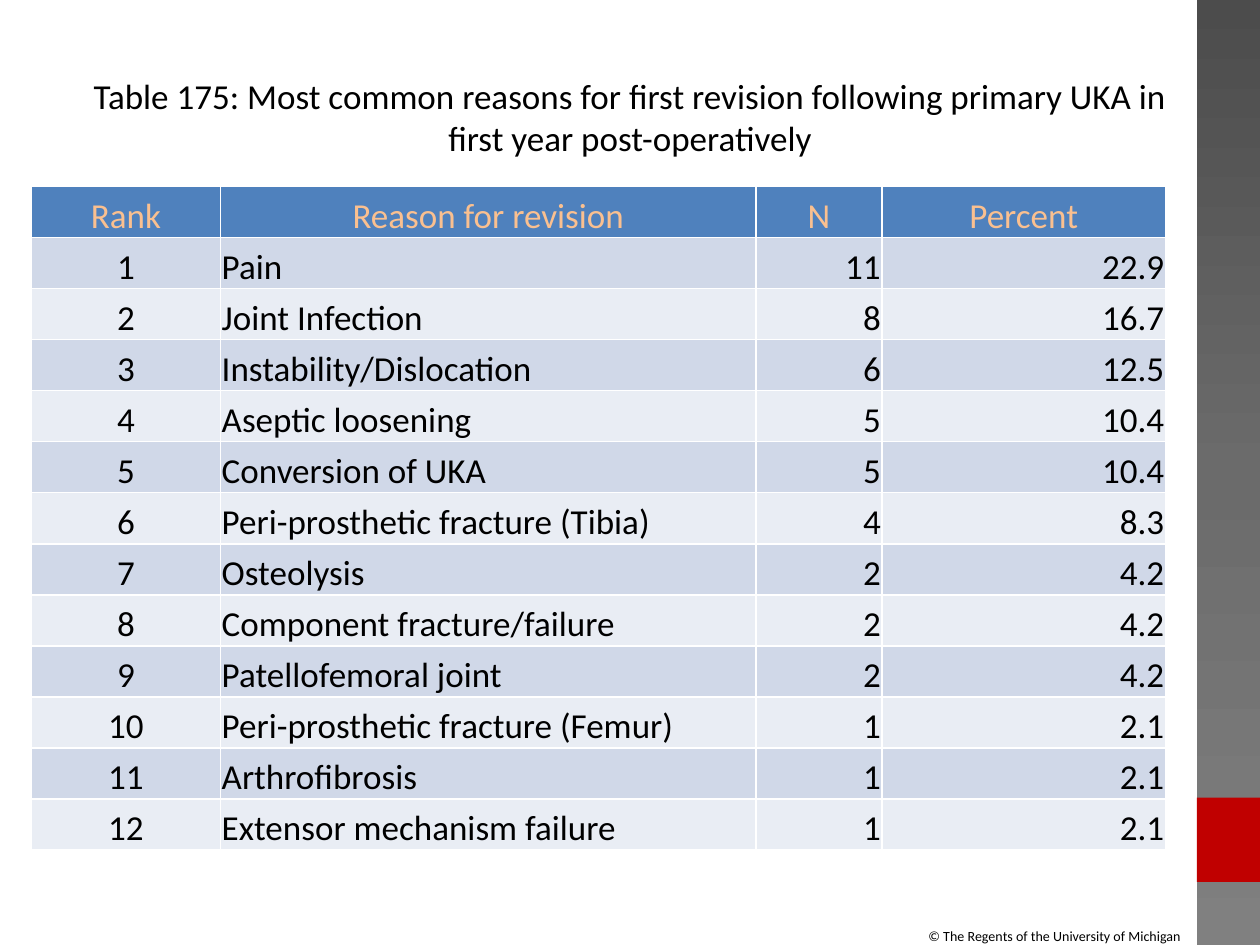
import copy
from typing import NamedTuple

import pptx
import pptx.dml.color
import pptx.enum.shapes
import pptx.enum.text
import pptx.oxml.ns
import pptx.util

Inches = pptx.util.Inches
Align = pptx.enum.text.PP_ALIGN
Anchor = pptx.enum.text.MSO_ANCHOR

FONT = "Calibri"
COLORS = {
    "text": "000000",
    "header_text": "FAC090",
    "header": "4F81BD",
    "odd_row": "D0D8E8",
    "even_row": "E9EDF4",
    "red": "C00000",
}
BAR_STOPS = [(0, "4C4C4C"), (0.5, "6B6B6B"), (1, "808080")]


class Column(NamedTuple):
    heading: str
    width: float
    alignment: Align


class Reason(NamedTuple):
    name: str
    count: int
    percent: float


COLUMNS = [
    Column("Rank", 1.5, Align.CENTER),
    Column("Reason for revision", 4.25, Align.LEFT),
    Column("N", 1, Align.RIGHT),
    Column("Percent", 2.25, Align.RIGHT),
]
REASONS = [
    Reason("Pain", 11, 22.9),
    Reason("Joint Infection", 8, 16.7),
    Reason("Instability/Dislocation", 6, 12.5),
    Reason("Aseptic loosening", 5, 10.4),
    Reason("Conversion of UKA", 5, 10.4),
    Reason("Peri-prosthetic fracture (Tibia)", 4, 8.3),
    Reason("Osteolysis", 2, 4.2),
    Reason("Component fracture/failure", 2, 4.2),
    Reason("Patellofemoral joint", 2, 4.2),
    Reason("Peri-prosthetic fracture (Femur)", 1, 2.1),
    Reason("Arthrofibrosis", 1, 2.1),
    Reason("Extensor mechanism failure", 1, 2.1),
]


def rgb(value: str) -> pptx.dml.color.RGBColor:
    return pptx.dml.color.RGBColor.from_string(value)


def write(text_frame, text: str, size: float, color: str, alignment: Align) -> None:
    text_frame.text = text
    paragraph = text_frame.paragraphs[0]
    paragraph.alignment = alignment
    paragraph.font.name = FONT
    paragraph.font.size = pptx.util.Pt(size)
    paragraph.font.bold = False
    paragraph.font.color.rgb = rgb(COLORS[color])


def add_side_block(slide, top: float, height: float):
    block = slide.shapes.add_shape(
        pptx.enum.shapes.MSO_SHAPE.RECTANGLE,
        Inches(9.5), Inches(top), Inches(0.5), Inches(height),
    )
    block.shadow.inherit = False
    block.line.fill.background()
    return block


def add_side_bar(slide) -> None:
    bar = add_side_block(slide, 0, 7.5)
    bar.fill.gradient()
    bar.fill.gradient_angle = 270
    stop_list = bar.element.spPr.find(".//" + pptx.oxml.ns.qn("a:gsLst"))
    stop_list.insert(1, copy.deepcopy(stop_list[0]))
    for stop, (position, color) in zip(bar.fill.gradient_stops, BAR_STOPS):
        stop.position = position
        stop.color.rgb = rgb(color)
    accent = add_side_block(slide, 6.33, 0.67)
    accent.fill.solid()
    accent.fill.fore_color.rgb = rgb(COLORS["red"])


def add_copyright(slide) -> None:
    box = slide.shapes.add_textbox(Inches(7.27), Inches(7.31), Inches(2.23), Inches(0.24))
    box.text_frame.word_wrap = False
    write(box.text_frame, "© The Regents of the University of Michigan", 8, "text", Align.LEFT)


def format_title(slide) -> None:
    title = slide.shapes.title
    title.left, title.top = Inches(0.5), Inches(0.3)
    title.width, title.height = Inches(9), Inches(1.25)
    title.text_frame.vertical_anchor = Anchor.MIDDLE
    write(
        title.text_frame,
        "Table 175: Most common reasons for first revision following primary UKA in "
        "first year post-operatively",
        20, "text", Align.CENTER,
    )


def fill_cell(cell, text: str, fill: str, color: str, alignment: Align) -> None:
    cell.fill.solid()
    cell.fill.fore_color.rgb = rgb(COLORS[fill])
    cell.vertical_anchor = Anchor.BOTTOM
    cell.margin_left = cell.margin_top = cell.margin_right = Inches(0.01)
    cell.margin_bottom = 0
    write(cell.text_frame, text, 20, color, alignment)


def add_reason_table(slide) -> None:
    row_count = len(REASONS) + 1
    table = slide.shapes.add_table(
        row_count, len(COLUMNS), Inches(0.25), Inches(1.48), Inches(9), Inches(5.27)
    ).table
    for row in table.rows:
        row.height = Inches(5.27 / row_count)
    for index, column in enumerate(COLUMNS):
        table.columns[index].width = Inches(column.width)
        fill_cell(table.cell(0, index), column.heading, "header", "header_text", Align.CENTER)
    for rank, reason in enumerate(REASONS, start=1):
        fill = "odd_row" if rank % 2 else "even_row"
        for index, (value, column) in enumerate(zip((rank, *reason), COLUMNS)):
            fill_cell(table.cell(rank, index), str(value), fill, "text", column.alignment)


def main() -> None:
    presentation = pptx.Presentation()
    presentation.slide_width = Inches(10)
    presentation.slide_height = Inches(7.5)
    slide = presentation.slides.add_slide(presentation.slide_layouts.get_by_name("Title Only"))
    add_side_bar(slide)
    add_copyright(slide)
    format_title(slide)
    add_reason_table(slide)
    presentation.save("out.pptx")


if __name__ == "__main__":
    main()
